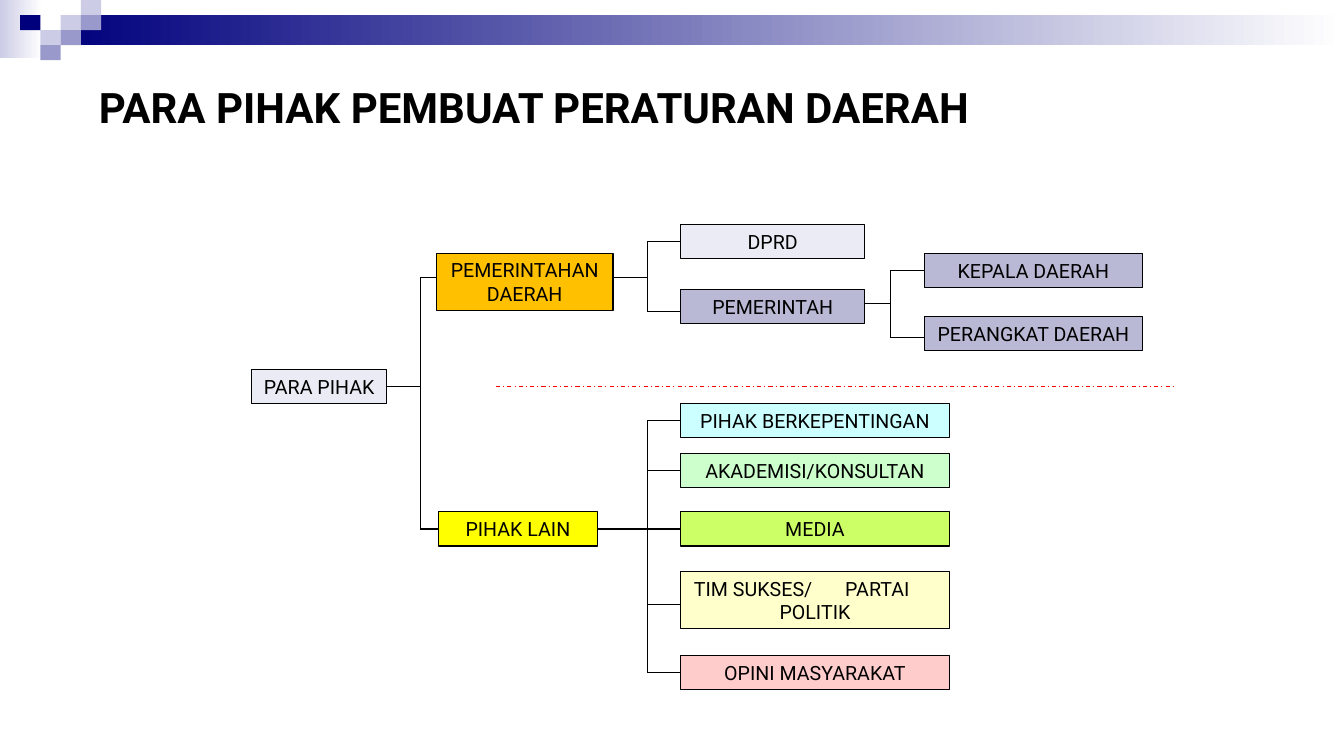
from lxml.etree import SubElement
from pptx import Presentation
from pptx.dml.color import RGBColor
from pptx.enum.dml import MSO_LINE
from pptx.enum.shapes import MSO_CONNECTOR, MSO_SHAPE
from pptx.enum.text import MSO_ANCHOR, PP_ALIGN
from pptx.oxml.ns import qn
from pptx.util import Cm, Pt

COLOURS = {
    "black": "000000", "white": "FFFFFF", "red": "FF0000",
    "navy": "00007D", "lilac": "CCCCE6", "violet": "9999CC",
    "pale": "EBEBF5", "slate": "B9B9D5", "orange": "FFC000",
    "yellow": "FFFF00", "cyan": "CCFFFF", "mint": "CCFFCC",
    "lime": "CCFF66", "cream": "FFFFCC", "pink": "FFCCCC",
}
RIGHT, LEFT = 3, 1
LOW, TALL = 0.86, 1.45


def colour(name):
    return RGBColor.from_string(COLOURS[name])


class Chart:
    font = "Roboto"
    size = Pt(14)
    stroke = Pt(0.75)

    def __init__(self, deck):
        self.page = deck.slides.add_slide(deck.slide_layouts[5])

    def title(self, text, left, top, width, height):
        title = self.page.shapes.title
        title.left, title.top = Cm(left), Cm(top)
        title.width, title.height = Cm(width), Cm(height)
        frame = title.text_frame
        frame.text = text
        frame.vertical_anchor = MSO_ANCHOR.MIDDLE
        frame.margin_bottom = Cm(0.5)
        para = frame.paragraphs[0]
        para.alignment = PP_ALIGN.LEFT
        self.style(para, Pt(30), True)

    def style(self, para, size, bold=False):
        para.font.name = self.font
        para.font.size = size
        para.font.bold = bold
        para.font.color.rgb = colour("black")

    def block(self, left, top, width, height, fill, fade=False):
        block = self.page.shapes.add_shape(
            MSO_SHAPE.RECTANGLE, Cm(left), Cm(top), Cm(width), Cm(height))
        block.shadow.inherit = False
        block.line.fill.background()
        if fade:
            block.fill.gradient()
            block.fill.gradient_angle = 0
            for stop, name in zip(block.fill.gradient_stops, (fill, "white")):
                stop.color.rgb = colour(name)
        else:
            block.fill.solid()
            block.fill.fore_color.rgb = colour(fill)
        return block

    def box(self, text, left, top, width, fill, height=LOW):
        box = self.block(left, top, width, height, fill)
        box.line.color.rgb = colour("black")
        box.line.width = self.stroke
        frame = box.text_frame
        frame.word_wrap = True
        frame.vertical_anchor = MSO_ANCHOR.MIDDLE
        frame.text = text
        for para in frame.paragraphs:
            para.alignment = PP_ALIGN.CENTER
            self.style(para, self.size)
        return box

    def spread(self, para, indent, stop):
        para.alignment = PP_ALIGN.LEFT
        properties = para._p.get_or_add_pPr()
        properties.set("marL", str(Cm(indent)))
        properties.set("indent", "0")
        tabs = properties.makeelement(qn("a:tabLst"))
        SubElement(tabs, qn("a:tab"), pos=str(Cm(stop)), algn="l")
        properties.insert(0, tabs)

    def line(self, x1, y1, x2, y2, name="black"):
        line = self.page.shapes.add_connector(
            MSO_CONNECTOR.STRAIGHT, Cm(x1), Cm(y1), Cm(x2), Cm(y2))
        line.line.color.rgb = colour(name)
        line.line.width = self.stroke
        SubElement(line._element.spPr, qn("a:effectLst"))
        return line

    def stub(self, box, side, trunk, height):
        edge = box.left + (box.width if side == RIGHT else 0)
        y = height or (box.top + box.height / 2) / Cm(1)
        line = self.line(trunk, y, edge / Cm(1), y)
        if height is None:
            line.end_connect(box, side)
        return y

    def bracket(self, parent, trunk, children, leave=None):
        self.stub(parent, RIGHT, trunk, leave)
        heights = [self.stub(box, LEFT, trunk, enter) for box, enter in children]
        self.line(trunk, min(heights), trunk, max(heights))


def main():
    deck = Presentation()
    deck.slide_width, deck.slide_height = Cm(33.87), Cm(19.05)
    chart = Chart(deck)

    chart.block(0, 0, 1.07, 1.47, "lilac", fade=True)
    chart.block(1.53, 0.38, 32.34, 0.76, "navy", fade=True)
    tile_width, tile_height = 0.51, 0.38
    for column, row, fill in (
            (3, 1, "lilac"), (4, 0, "lilac"), (4, 1, "violet"),
            (2, 2, "lilac"), (1, 1, "navy"), (3, 2, "violet"),
            (2, 3, "violet")):
        chart.block(column * tile_width, row * tile_height,
                    tile_width, tile_height, fill)

    chart.title("PARA PIHAK PEMBUAT PERATURAN DAERAH", 2.24, 1.7, 26.01, 2.36)

    parties = chart.box("PARA PIHAK", 6.35, 9.32, 3.39, "pale")
    government = chart.box("PEMERINTAHAN DAERAH", 11, 6.38, 4.45, "orange", TALL)
    others = chart.box("PIHAK LAIN", 11.05, 12.9, 4.01, "yellow")
    council = chart.box("DPRD", 17.15, 5.66, 4.65, "pale")
    executive = chart.box("PEMERINTAH", 17.15, 7.29, 4.65, "slate")
    head = chart.box("KEPALA DAERAH", 23.29, 6.38, 5.51, "slate")
    offices = chart.box("PERANGKAT DAERAH", 23.29, 7.98, 5.51, "slate")
    stakeholders, academics, media, campaign, public = [
        chart.box(text, 17.15, top, 6.78, fill, height)
        for text, top, fill, height in (
            ("PIHAK BERKEPENTINGAN", 10.16, "cyan", LOW),
            ("AKADEMISI/KONSULTAN", 11.43, "mint", LOW),
            ("MEDIA", 12.9, "lime", LOW),
            ("TIM SUKSES/\tPARTAI\nPOLITIK", 14.4, "cream", TALL),
            ("OPINI MASYARAKAT", 16.51, "pink", LOW))]
    chart.spread(campaign.text_frame.paragraphs[0], 0.09, 4.55)

    chart.bracket(parties, 10.59, [(government, 6.99), (others, None)])
    chart.bracket(government, 16.31, [(council, None), (executive, 7.85)], 6.99)
    chart.bracket(executive, 22.43, [(head, None), (offices, 8.51)], 7.65)
    chart.bracket(others, 16.31, [
        (stakeholders, None), (academics, None), (media, None),
        (campaign, 15.24), (public, None)])

    divider = chart.line(12.5, 9.73, 29.64, 9.73, "red")
    divider.line.dash_style = MSO_LINE.DASH_DOT
    deck.save("out.pptx")


if __name__ == "__main__":
    main()
